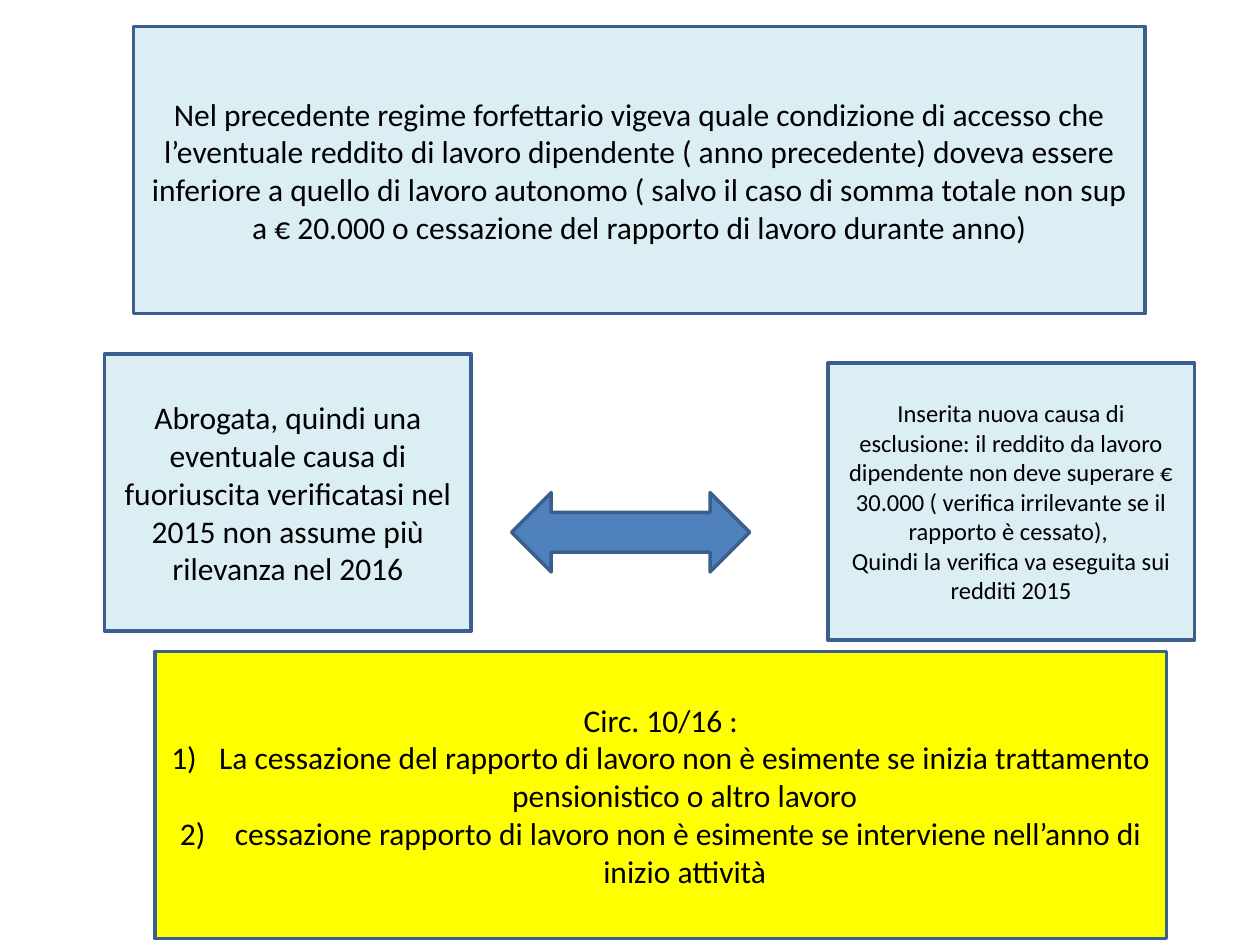
from pptx import Presentation
from pptx.dml.color import RGBColor
from pptx.enum.shapes import MSO_SHAPE as Shape
from pptx.enum.text import MSO_ANCHOR as Anchor, PP_ALIGN as Align
from pptx.oxml.ns import qn
from pptx.util import Inches, Pt
from lxml.etree import SubElement

COLORS = {"pale": "DBEEF4", "yellow": "FFFF00", "blue": "4F81BD",
          "edge": "3A5F8C", "text": "000000"}
WIDTH, HEIGHT = Inches(10), Inches(7.5)
COL, ROW = WIDTH / 100, HEIGHT / 100
WIDE = (80.3, 30.4)
NARROW = (29.1, 29.33)
NUMBER_INDENT = Inches(0.38)

RULE_BEFORE = (
    "Nel precedente regime forfettario vigeva quale condizione di accesso che "
    "l’eventuale reddito di lavoro dipendente ( anno precedente) doveva essere "
    "inferiore a quello di lavoro autonomo ( salvo il caso di somma totale non sup "
    "a € 20.000 o cessazione del rapporto di lavoro durante anno)")
REPEALED = ("Abrogata, quindi una eventuale causa di fuoriuscita verificatasi "
            "nel 2015 non assume più rilevanza nel 2016")
NEW_CAUSE = [
    "Inserita nuova causa di esclusione: il reddito da lavoro dipendente non deve "
    "superare € 30.000 ( verifica irrilevante se il rapporto è cessato), ",
    "Quindi la verifica va eseguita sui redditi 2015"]
CIRCULAR_TITLE = "Circ. 10/16 :"
CIRCULAR_POINTS = [
    "La cessazione del rapporto di lavoro non è esimente se inizia trattamento "
    "pensionistico o altro lavoro",
    " cessazione rapporto di lavoro non è esimente se interviene nell’anno di "
    "inizio attività"]


def rgb(name):
    return RGBColor.from_string(COLORS[name])


def add_outlined(s, kind, box, fill):
    """Draw a preset shape in a box given as columns and rows of the grid."""
    x, y, w, h = box
    sp = s.shapes.add_shape(kind, round(x * COL), round(y * ROW),
                            round(w * COL), round(h * ROW))
    sp.shadow.inherit = False
    sp.fill.solid()
    sp.fill.fore_color.rgb = rgb(fill)
    sp.line.color.rgb = rgb("edge")
    sp.line.width = Pt(2)
    return sp


def number(p):
    pPr = p._p.get_or_add_pPr()
    pPr.set("marL", str(NUMBER_INDENT))
    pPr.set("indent", str(-NUMBER_INDENT))
    SubElement(pPr, qn("a:buAutoNum"), type="arabicParenR")


def write(p, text, size=18, color="text", font="Calibri", numbered=False):
    p.alignment = Align.CENTER
    if numbered:
        number(p)
    r = p.add_run()
    r.text = text
    r.font.size = Pt(size)
    r.font.name = font
    r.font.color.rgb = rgb(color)


def add_panel(s, box, paragraphs, fill="pale", size=18, first_numbered=None):
    """Draw a text box; paragraphs from index first_numbered on are numbered."""
    tf = add_outlined(s, Shape.RECTANGLE, box, fill).text_frame
    tf.word_wrap = True
    tf.vertical_anchor = Anchor.MIDDLE
    for i, text in enumerate(paragraphs):
        p = tf.add_paragraph() if i else tf.paragraphs[0]
        numbered = first_numbered is not None and i >= first_numbered
        write(p, text, size=size, numbered=numbered)


def add_comparison(s, x, y):
    """Place the repealed rule and the new one with a double arrow between."""
    w, h = NARROW
    add_outlined(s, Shape.LEFT_RIGHT_ARROW, (x + 32.3, y + 14.66, 18.9, 8.4), "blue")
    add_panel(s, (x, y, w, h), [REPEALED])
    add_panel(s, (x + 57.4, y + 0.93, w, h), NEW_CAUSE, size=14)


def main():
    prs = Presentation()
    prs.slide_width, prs.slide_height = WIDTH, HEIGHT
    s = prs.slides.add_slide(prs.slide_layouts[6])
    add_panel(s, (10.6, 2.8, *WIDE), [RULE_BEFORE])
    add_comparison(s, 8.3, 37.47)
    add_panel(s, (12.3, 68.93, *WIDE), [CIRCULAR_TITLE, *CIRCULAR_POINTS],
              fill="yellow", first_numbered=1)
    prs.save("out.pptx")


if __name__ == "__main__":
    main()
